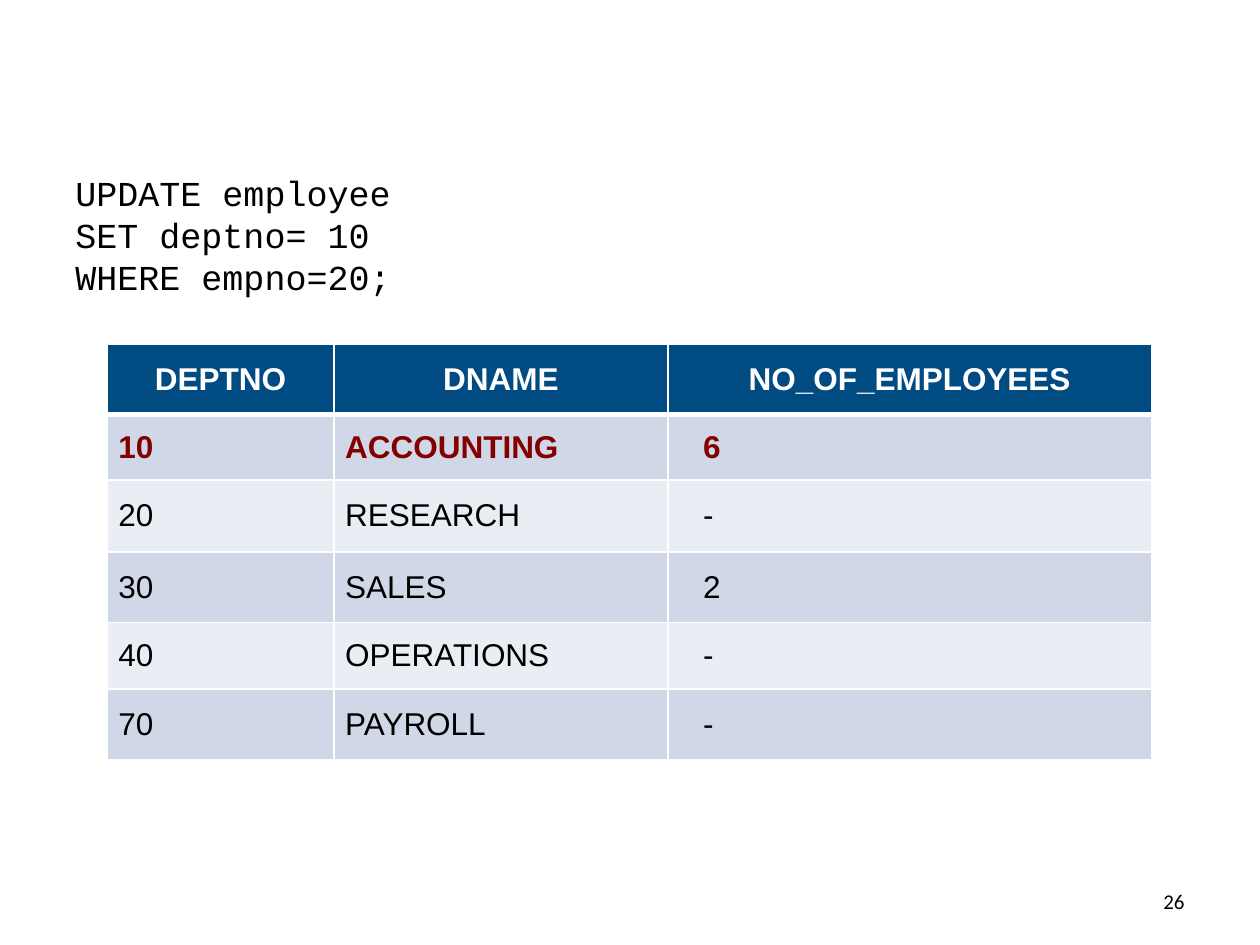
from dataclasses import dataclass

from lxml.etree import SubElement
from pptx import Presentation
from pptx.dml.color import RGBColor
from pptx.enum.text import MSO_ANCHOR, PP_ALIGN
from pptx.oxml.ns import qn
from pptx.util import Inches, Pt


@dataclass(frozen=True)
class Theme:
    black: str = "000000"
    white: str = "FFFFFF"
    header: str = "004B82"
    highlight: str = "820000"
    bands: tuple = ("D0D8E8", "E9EDF4")
    body_font: str = "Arial"
    code_font: str = "Courier New"
    number_font: str = "Calibri"
    code_size: int = 20
    table_size: int = 18
    number_size: int = 12
    thin_line: int = 1
    thick_line: int = 3


QUERY = ["UPDATE employee", "SET deptno= 10", "WHERE empno=20;"]
DEPARTMENTS = [
    ("DEPTNO", "DNAME", "NO_OF_EMPLOYEES"),
    ("10", "ACCOUNTING", "6"),
    ("20", "RESEARCH", "-"),
    ("30", "SALES", "2"),
    ("40", "OPERATIONS", "-"),
    ("70", "PAYROLL", "-"),
]
COLUMN_WIDTHS = [1.8, 2.65, 3.84]
ROW_HEIGHTS = [0.56, 0.52, 0.57, 0.56, 0.53, 0.56]


def apply_format(target, values):
    for name, value in values.items():
        setattr(target, name, value)


class SlideBuilder:
    def __init__(self, page, theme):
        self.page = page
        self.theme = theme

    def fill_paragraph(self, para, lines, color, para_format, font_format):
        """Put the lines in one paragraph, parted by line breaks."""
        apply_format(para, para_format)
        for index, line in enumerate(lines):
            if index:
                para.add_line_break()
            span = para.add_run()
            span.text = line
            apply_format(span.font, font_format)
            span.font.color.rgb = RGBColor.from_string(color)

    def text(self, place, lines, frame_format, para_format, font_format):
        box = self.page.shapes.add_textbox(*map(Inches, place))
        apply_format(box.text_frame, {"word_wrap": True, **frame_format})
        self.fill_paragraph(box.text_frame.paragraphs[0], lines,
                            self.theme.black, para_format, font_format)

    def border(self, cell, top, bottom):
        """Draw white cell edges; top and bottom are widths in points."""
        properties = cell._tc.get_or_add_tcPr()
        thin = self.theme.thin_line
        edges = {"lnL": thin, "lnR": thin, "lnT": top, "lnB": bottom}
        for edge, width in edges.items():
            line = SubElement(properties, qn(f"a:{edge}"), w=str(Pt(width)))
            fill = SubElement(line, qn("a:solidFill"))
            SubElement(fill, qn("a:srgbClr"), val=self.theme.white)

    def cell(self, cell, text, row, column):
        theme = self.theme
        is_header = row == 0
        is_last_column = column == len(COLUMN_WIDTHS) - 1
        if is_header:
            fill, color = theme.header, theme.white
        else:
            fill = theme.bands[(row - 1) % 2]
            color = theme.highlight if row == 1 else theme.black
        if is_last_column:
            left, right, vertical = (0 if is_header else 0.28), 0, 0
        else:
            left, right, vertical = 0.09, 0.09, 0.03
        apply_format(cell, {
            "margin_left": Inches(left), "margin_right": Inches(right),
            "margin_top": Inches(vertical), "margin_bottom": Inches(vertical),
            "vertical_anchor": MSO_ANCHOR.MIDDLE,
        })
        self.border(cell,
                    top=theme.thick_line if row == 1 else theme.thin_line,
                    bottom=theme.thick_line if is_header else theme.thin_line)
        cell.fill.solid()
        cell.fill.fore_color.rgb = RGBColor.from_string(fill)
        alignment = PP_ALIGN.CENTER if is_header else PP_ALIGN.LEFT
        self.fill_paragraph(cell.text_frame.paragraphs[0], [text], color,
                            {"alignment": alignment},
                            {"name": theme.body_font,
                             "size": Pt(theme.table_size), "bold": row <= 1})

    def table(self, left, top, rows):
        place = (left, top, sum(COLUMN_WIDTHS), sum(ROW_HEIGHTS))
        frame = self.page.shapes.add_table(
            len(rows), len(COLUMN_WIDTHS), *map(Inches, place))
        table = frame.table
        for column, width in zip(table.columns, COLUMN_WIDTHS):
            column.width = Inches(width)
        for row, height in zip(table.rows, ROW_HEIGHTS):
            row.height = Inches(height)
        for row, values in enumerate(rows):
            for column, text in enumerate(values):
                self.cell(table.cell(row, column), text, row, column)


def main():
    deck = Presentation()
    apply_format(deck, {"slide_width": Inches(10), "slide_height": Inches(7.5)})
    theme = Theme()
    builder = SlideBuilder(deck.slides.add_slide(deck.slide_layouts[6]), theme)
    builder.text((0.5, 1.31, 9, 5.51), QUERY, {},
                 {"space_before": Pt(4)},
                 {"name": theme.code_font, "size": Pt(theme.code_size)})
    builder.table(0.85, 2.73, DEPARTMENTS)
    builder.text((7.17, 6.95, 2.33, 0.4), ["26"],
                 {"vertical_anchor": MSO_ANCHOR.MIDDLE},
                 {"alignment": PP_ALIGN.RIGHT},
                 {"name": theme.number_font, "size": Pt(theme.number_size)})
    deck.save("out.pptx")


if __name__ == "__main__":
    main()
